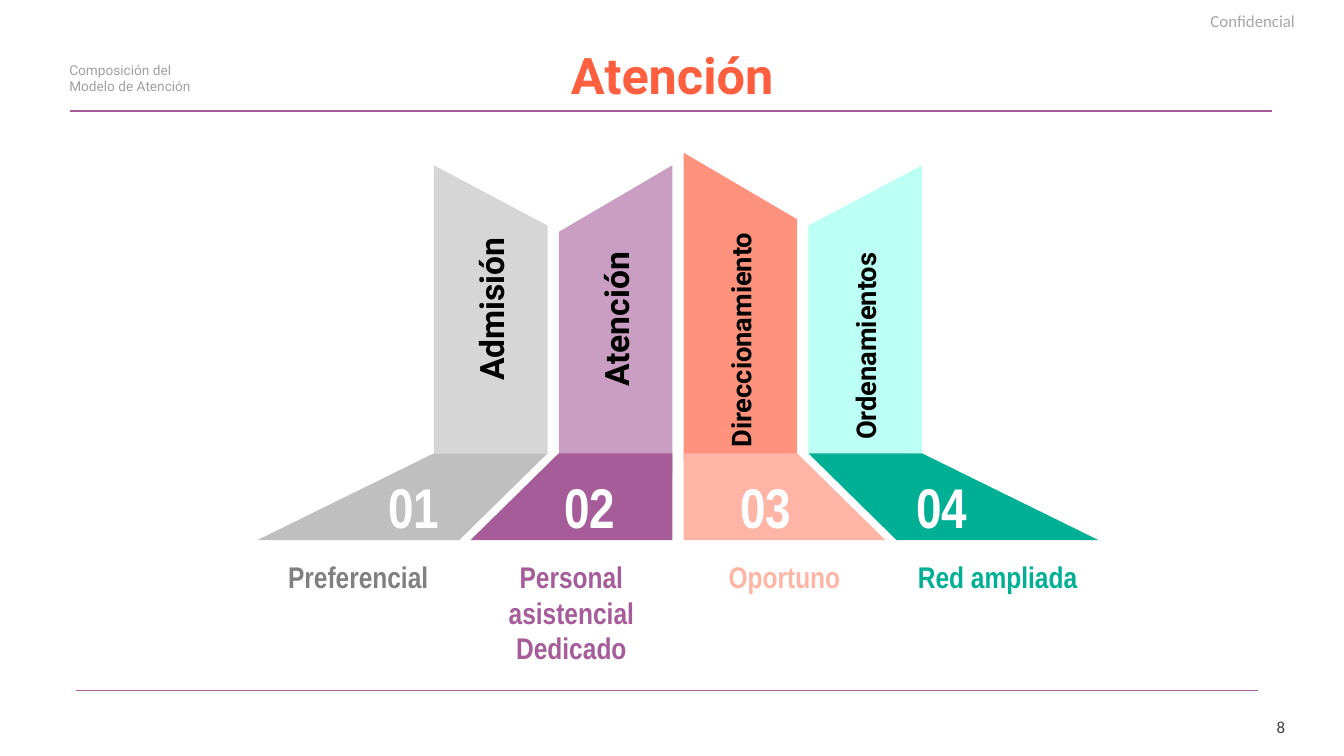
from pptx import Presentation
from pptx.dml.color import RGBColor
from pptx.enum.shapes import MSO_CONNECTOR
from pptx.enum.text import MSO_ANCHOR as Anchor, MSO_AUTO_SIZE as Fit, PP_ALIGN as Align
from pptx.oxml.ns import qn
from pptx.util import Inches, Pt
from lxml.etree import SubElement

TITLE = "Atención"
TOPIC = "Composición del Modelo de Atención"
NOTICE = "Confidencial"
PAGE = "8"
PURPLE = "A65C99"
RULES = [(1, 18.15, 1.58, 2.25), (1.08, 17.95, 9.86, 1)]  # left, right, y, points

# name, size, alignment, panel top left, top right, bottom, panel fill
PANELS = [
    ("Admisión", 34.5, Align.CENTER, 2.36, 3.22, 6.47, "D6D6D6"),
    ("Atención", 34.5, Align.CENTER, 3.31, 2.36, 6.76, "CA9DC2"),
    ("Direccionamiento", 28, Align.LEFT, 2.18, 3.13, 6.58, "FF927C"),
    ("Ordenamientos", 28, Align.LEFT, 3.22, 2.36, 6.47, "BCFFF4"),
]
# caption, caption colour, base fill
BASES = [
    ("Preferencial", "808080", "BFBFBF"),
    ("Personal asistencial Dedicado", PURPLE, PURPLE),
    ("Oportuno", "FFB5A6", "FFB5A6"),
    ("Red ampliada", "00B094", "00B094"),
]
PANEL_X, PANEL_W, PANEL_STEP = 6.19, 1.62, 1.78
BASE_X, BASE_W, BASE_STEP = 3.67, 2.88, 3.04
NUM_X, NUM_W, NUM_STEP = 4.56, 2.68, 2.51
FLOOR, FRONT = 6.47, 7.71
PAD = 0.19


def color(code):
    return RGBColor.from_string(code)


def write(shape, text, size, font, code, bold=False, align=Align.LEFT,
          anchor=Anchor.TOP, pad=None):
    frame = shape.text_frame
    frame.text = text
    frame.word_wrap = True
    frame.auto_size = Fit.NONE
    frame.vertical_anchor = anchor
    if pad is not None:
        frame.margin_left = frame.margin_right = Inches(pad)
        frame.margin_top = frame.margin_bottom = Inches(pad)
    par = frame.paragraphs[0]
    par.alignment = align
    par.font.size, par.font.name, par.font.bold = Pt(size), font, bold
    par.font.color.rgb = color(code)
    return par


def label(shapes, x, y, w, h, *args, **opts):
    """Add a text box and return its paragraph."""
    box = shapes.add_textbox(Inches(x), Inches(y), Inches(w), Inches(h))
    return write(box, *args, **opts)


def outline(shapes, points, fill):
    """Add a closed, filled outline through points given in inches."""
    first, *rest = [(Inches(x), Inches(y)) for x, y in points]
    pen = shapes.build_freeform(*first)
    pen.add_line_segments(rest, close=True)
    shape = pen.convert_to_shape()
    shape.shadow.inherit = False
    shape.fill.solid()
    shape.fill.fore_color.rgb = color(fill)
    shape.line.fill.background()
    return shape


def column(shapes, i, panel, base):
    """Draw one standing panel with its base, number and caption."""
    name, size, align, top_l, top_r, foot, wall = panel
    caption, ink, ground = base
    left = PANEL_X + PANEL_STEP * i
    right = left + PANEL_W
    low = BASE_X + BASE_STEP * i

    shape = outline(shapes, [(left, top_l), (right, top_r), (right, foot), (left, foot)], wall)
    write(shape, name, size, "Roboto", "000000", True, align, Anchor.MIDDLE, PAD)
    shape.text_frame._txBody.bodyPr.set("vert", "vert270")

    outline(shapes, [(left, FLOOR), (right, FLOOR), (low + BASE_W, FRONT), (low, FRONT)], ground)
    label(shapes, NUM_X + NUM_STEP * i, 6.55, NUM_W, 0.95, f"{i + 1:02}", 57.5,
          "Arial Narrow", "FFFFFF", True, Align.CENTER, pad=PAD)
    label(shapes, low, 7.78, BASE_W, 0.73, caption, 30.7,
          "Arial Narrow", ink, True, Align.CENTER, pad=PAD)


def main():
    deck = Presentation()
    deck.slide_width, deck.slide_height = Inches(19.17), Inches(10.79)
    slide = deck.slides.add_slide(deck.slide_layouts[5])
    shapes = slide.shapes

    title = shapes.title
    title.left, title.top = Inches(1.32), Inches(0.62)
    title.width, title.height = Inches(16.54), Inches(0.99)
    par = write(title, TITLE, 51.8, "Roboto", "FF5F3F", True, Align.CENTER, Anchor.MIDDLE)
    par.line_spacing = 0.9

    label(shapes, 17.86, 10.23, 0.47, 0.29, PAGE, 17.3, "Calibri", "404040",
          align=Align.RIGHT, anchor=Anchor.BOTTOM, pad=0)
    par = label(shapes, 13.78, 0.06, 4.75, 0.42, NOTICE, 17.3, "Calibri", "A6A6A6",
                align=Align.RIGHT, pad=0.06)
    par.line_spacing = 1.1
    label(shapes, 0.89, 0.83, 2.3, 0.57, TOPIC, 14, "Roboto", "A0A0A0")

    for left, right, y, width in RULES:
        rule = shapes.add_connector(MSO_CONNECTOR.STRAIGHT, Inches(left), Inches(y),
                                    Inches(right), Inches(y))
        rule.line.color.rgb = color(PURPLE)
        rule.line.width = Pt(width)
        SubElement(rule._element.spPr, qn("a:effectLst"))

    for i, (panel, base) in enumerate(zip(PANELS, BASES)):
        column(shapes.add_group_shape().shapes, i, panel, base)

    deck.save("out.pptx")


if __name__ == "__main__":
    main()
